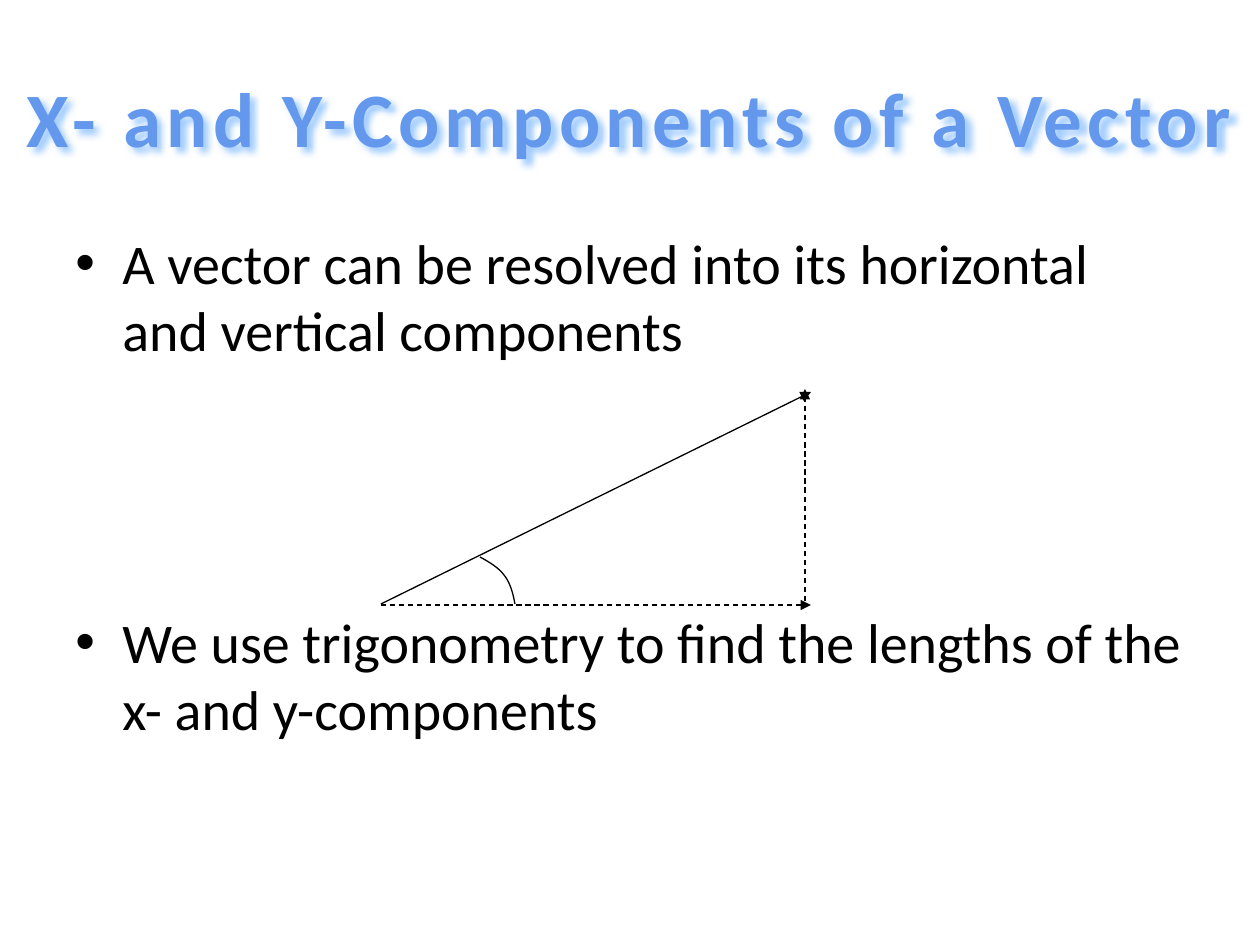
"""Build the slide on resolving a vector into its x- and y-components."""
from dataclasses import dataclass
from typing import Any

from lxml.etree import SubElement
from pptx import Presentation
from pptx.dml.color import RGBColor
from pptx.enum.dml import MSO_LINE
from pptx.enum.shapes import MSO_CONNECTOR
from pptx.enum.text import MSO_ANCHOR, PP_ALIGN
from pptx.oxml import parse_xml
from pptx.oxml.ns import nsdecls, qn
from pptx.util import Inches, Pt

Point = tuple[int, int]
PX_PER_INCH = 126


@dataclass(frozen=True)
class Theme:
    font: str = "Calibri"
    ink: str = "000000"
    title_stops: tuple = ((0.1, "6398ED"), (0.75, "265EA0"))
    title_outline: str = "F4F6F9"
    title_shadow: str = "9FCBFF"
    title_size: int = 44
    body_size: int = 32
    line_width: float = 0.75


@dataclass(frozen=True)
class Arrow:
    start: Point
    end: Point
    dashed: bool = False


@dataclass(frozen=True)
class Bullet:
    text: str
    space_before: int


THEME = Theme()
BULLETS = (
    Bullet("A vector can be resolved into its horizontal and vertical components", 0),
    Bullet("We use trigonometry to find the lengths of the x- and y-components", 140),
)
ARROWS = (
    Arrow((381, 604), (811, 392)),
    Arrow((381, 605), (811, 605), True),
    Arrow((805, 601), (805, 389), True),
)
ANGLE_ARC = (
    ((480, 557), (489, 562), (498, 567), (504, 575)),
    ((504, 575), (510, 582), (513, 593), (515, 604)),
)


def px(length: float) -> int:
    return round(length * Inches(1) / PX_PER_INCH)


def apply(target: Any, formats: dict[str, Any]) -> None:
    for name, value in formats.items():
        setattr(target, name, value)


def place(shape: Any, left: int, top: int, width: int, height: int) -> None:
    apply(shape, {"left": px(left), "top": px(top),
                  "width": px(width), "height": px(height)})


def add_title(slide: Any) -> None:
    title = slide.shapes.title
    place(title, 0, 38, 1260, 157)
    frame = title.text_frame
    apply(frame, {"text": "X- and Y-Components of a Vector", "word_wrap": True,
                  "vertical_anchor": MSO_ANCHOR.MIDDLE})
    paragraph = frame.paragraphs[0]
    paragraph.alignment = PP_ALIGN.CENTER
    run = paragraph.runs[0]
    apply(run.font, {"name": THEME.font, "size": Pt(THEME.title_size), "bold": True})
    fill = run.font.fill
    fill.gradient()
    fill.gradient_angle = 270
    for stop, (position, colour) in zip(fill.gradient_stops, THEME.title_stops):
        stop.position = position
        stop.color.rgb = RGBColor.from_string(colour)
    properties = run._r.get_or_add_rPr()
    properties.set("spc", "300")
    properties.insert(0, parse_xml(
        f'<a:ln {nsdecls("a")} w="11430"><a:solidFill>'
        f'<a:srgbClr val="{THEME.title_outline}"/></a:solidFill></a:ln>'))
    title._element.spPr.append(parse_xml(
        f'<a:effectLst {nsdecls("a")}><a:outerShdw blurRad="50800" dist="38100" '
        f'dir="2700000" algn="tl" rotWithShape="0">'
        f'<a:srgbClr val="{THEME.title_shadow}"/></a:outerShdw></a:effectLst>'))


def add_bullets(slide: Any, bullets: tuple[Bullet, ...]) -> None:
    body = slide.shapes.add_textbox(0, 0, 0, 0)
    place(body, 63, 222, 1134, 622)
    frame = body.text_frame
    frame.word_wrap = True
    for index, bullet in enumerate(bullets):
        paragraph = frame.add_paragraph() if index else frame.paragraphs[0]
        properties = paragraph._p.get_or_add_pPr()
        properties.set("marL", str(px(47)))
        properties.set("indent", str(-px(47)))
        paragraph.space_before = Pt(bullet.space_before)
        SubElement(properties, qn("a:buFont"), typeface="Arial")
        SubElement(properties, qn("a:buChar"), char="•")
        run = paragraph.add_run()
        run.text = bullet.text
        apply(run.font, {"name": THEME.font, "size": Pt(THEME.body_size)})
        run.font.color.rgb = RGBColor.from_string(THEME.ink)


def ink_line(shape: Any) -> None:
    shape.line.color.rgb = RGBColor.from_string(THEME.ink)
    shape.line.width = Pt(THEME.line_width)


def add_arrow(diagram: Any, arrow: Arrow) -> None:
    connector = diagram.shapes.add_connector(
        MSO_CONNECTOR.STRAIGHT, *map(px, arrow.start + arrow.end))
    ink_line(connector)
    if arrow.dashed:
        connector.line.dash_style = MSO_LINE.DASH
    SubElement(connector.line._get_or_add_ln(), qn("a:tailEnd"), type="triangle")
    SubElement(connector._element.spPr, qn("a:effectLst"))


def bezier(curve: tuple[Point, ...], t: float) -> Point:
    weights = ((1 - t) ** 3, 3 * t * (1 - t) ** 2, 3 * t ** 2 * (1 - t), t ** 3)
    x, y = (sum(w * value for w, value in zip(weights, axis)) for axis in zip(*curve))
    return px(x), px(y)


def add_arc(diagram: Any, curves: tuple, steps: int = 10) -> None:
    points = [bezier(curve, step / steps)
              for curve in curves for step in range(1, steps + 1)]
    builder = diagram.shapes.build_freeform(*bezier(curves[0], 0))
    builder.add_line_segments(points, close=False)
    arc = builder.convert_to_shape()
    arc.fill.background()
    arc.shadow.inherit = False
    ink_line(arc)


def main() -> None:
    deck = Presentation()
    apply(deck, {"slide_width": Inches(10), "slide_height": Inches(7.5)})
    slide = deck.slides.add_slide(deck.slide_layouts[5])
    add_title(slide)
    add_bullets(slide, BULLETS)
    diagram = slide.shapes.add_group_shape()
    for arrow in ARROWS:
        add_arrow(diagram, arrow)
    add_arc(diagram, ANGLE_ARC)
    deck.save("out.pptx")


if __name__ == "__main__":
    main()
